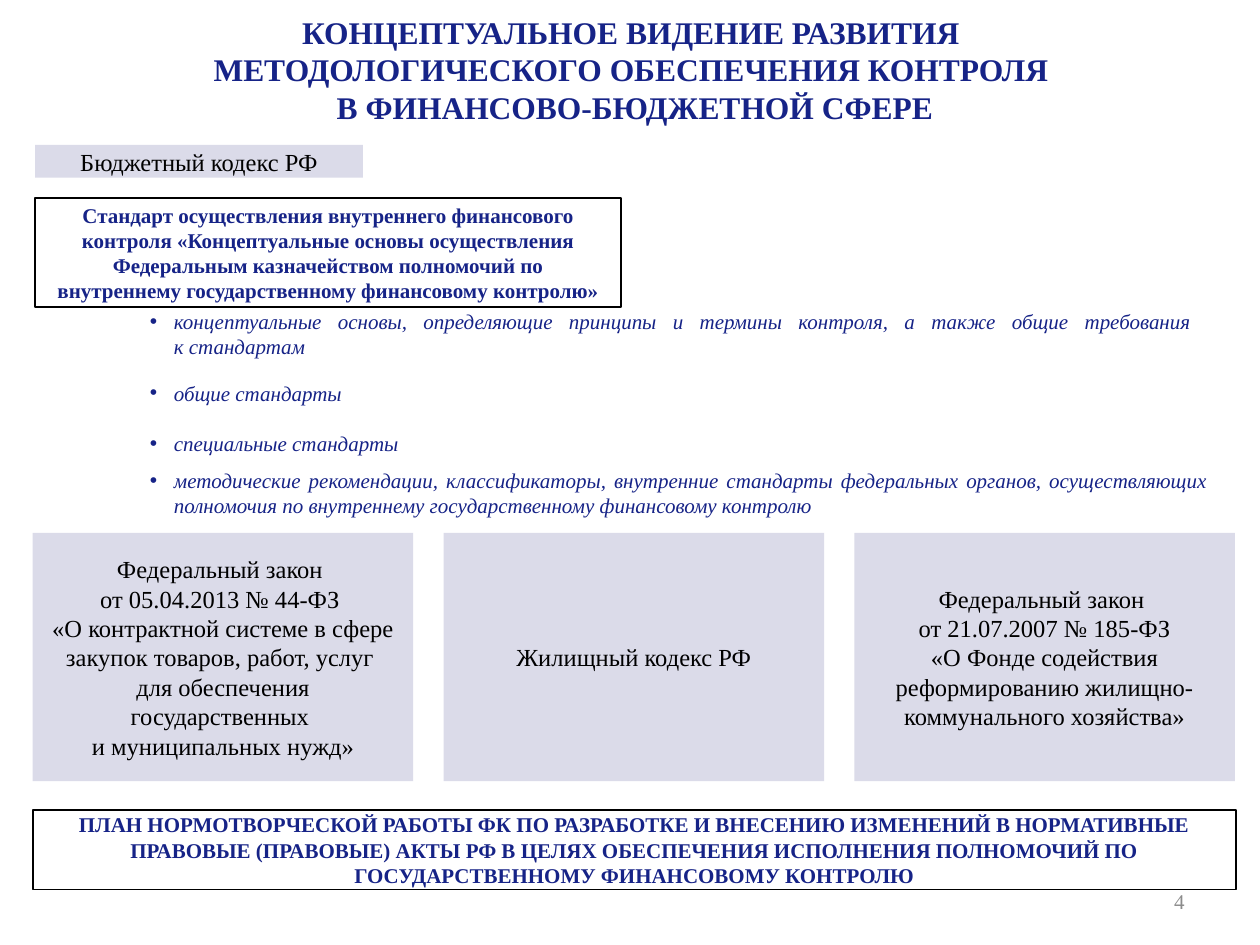
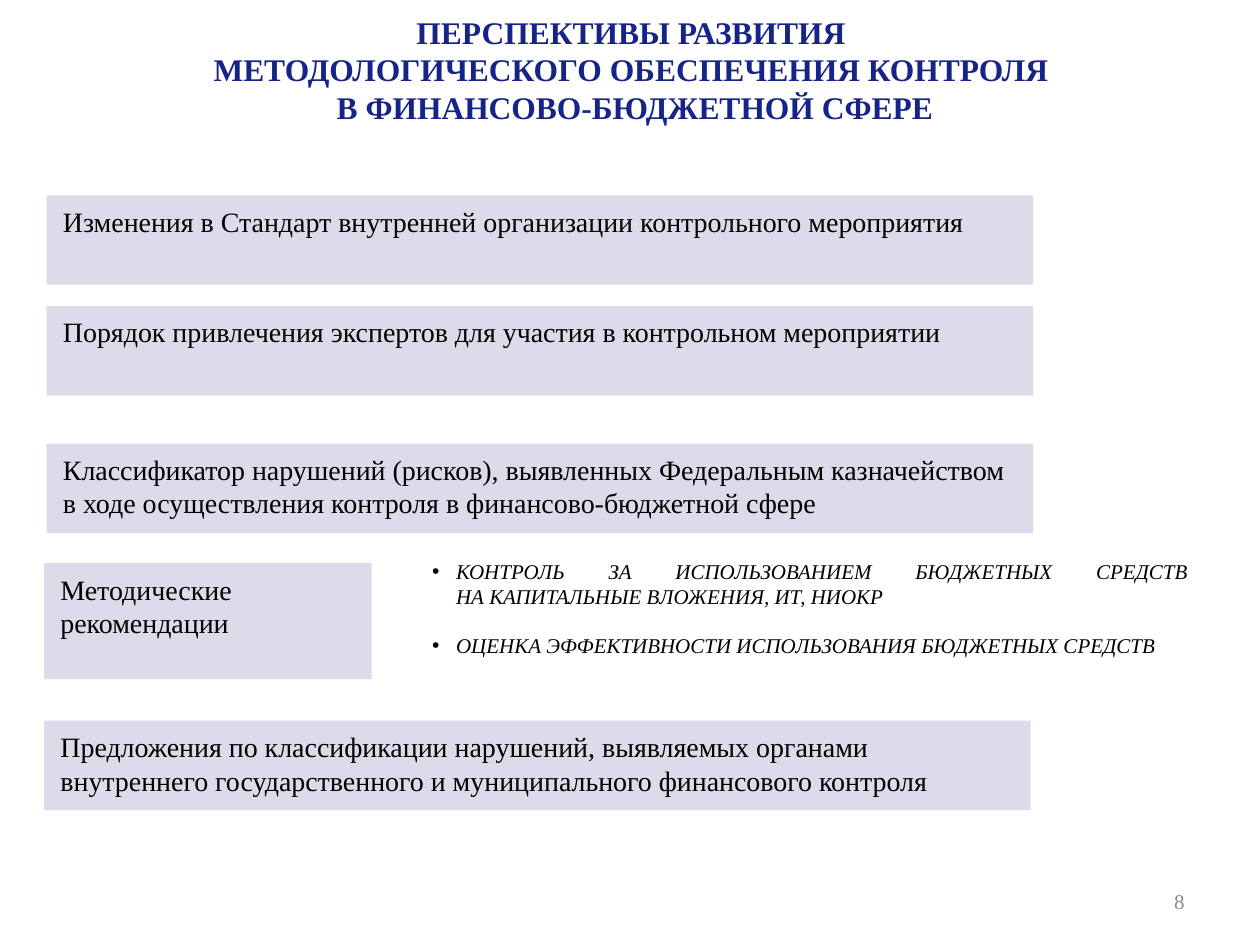
from dataclasses import dataclass

import lxml.etree
import pptx
import pptx.dml.color
import pptx.enum.shapes
import pptx.enum.text
import pptx.oxml.ns
import pptx.util

ALIGN = pptx.enum.text.PP_ALIGN
ANCHOR = pptx.enum.text.MSO_ANCHOR
EMU_PER_PX = 9144  # 100 px to the inch


@dataclass(frozen=True)
class Theme:
    font: str = "Times New Roman"
    navy: str = "162387"
    black: str = "000000"
    white: str = "FFFFFF"
    lilac: str = "DBDBE9"
    gray: str = "8C8C8C"
    title: int = 18
    topic: int = 16
    law: int = 14
    detail: int = 12


THEME = Theme()


@dataclass(frozen=True)
class Area:
    left: int
    top: int
    width: int
    height: int


@dataclass(frozen=True)
class TextStyle:
    size: int
    color: str
    bold: bool = False
    italic: bool = False
    align: ALIGN = ALIGN.CENTER
    anchor: ANCHOR = ANCHOR.MIDDLE
    margin_x: int = 13
    margin_y: int = 7


@dataclass(frozen=True)
class BoxStyle:
    text: TextStyle
    fill: str
    line: str | None = None


@dataclass(frozen=True)
class Box:
    area: Area
    text: str
    style: BoxStyle


@dataclass(frozen=True)
class Bullet:
    text: str
    space_before: float = 0


TITLE_TEXT = TextStyle(THEME.title, THEME.navy, bold=True, anchor=ANCHOR.TOP, margin_x=10, margin_y=5)
NUMBER_TEXT = TextStyle(THEME.detail, THEME.gray, align=ALIGN.RIGHT, margin_x=10, margin_y=5)
NAVY_LIST = TextStyle(THEME.detail, THEME.navy, italic=True, align=ALIGN.JUSTIFY, anchor=ANCHOR.TOP)
BLACK_LIST = TextStyle(THEME.detail, THEME.black, italic=True, align=ALIGN.JUSTIFY, anchor=ANCHOR.TOP)
LAW = BoxStyle(TextStyle(THEME.law, THEME.black), THEME.lilac)
FRAMED = BoxStyle(TextStyle(THEME.detail, THEME.navy, bold=True), THEME.white, THEME.black)
TOPIC = BoxStyle(TextStyle(THEME.topic, THEME.black, align=ALIGN.LEFT, anchor=ANCHOR.TOP), THEME.lilac)

TITLE_AREA = Area(55, 5, 898, 62)
NUMBER_AREA = Area(717, 695, 233, 40)
TITLE_ENDING = "МЕТОДОЛОГИЧЕСКОГО ОБЕСПЕЧЕНИЯ КОНТРОЛЯ \nВ ФИНАНСОВО-БЮДЖЕТНОЙ СФЕРЕ"
BULLET_INDENT = 19

LAW_TEXTS = [
    "Федеральный закон \nот 05.04.2013 № 44-ФЗ \v«О контрактной системе в сфере закупок товаров, "
    "работ, услуг \vдля обеспечения государственных \vи муниципальных нужд»",
    "Жилищный кодекс РФ",
    "Федеральный закон \nот 21.07.2007 № 185-ФЗ\n«О Фонде содействия реформированию "
    "жилищно-коммунального хозяйства»",
]
VISION_BOXES = [
    Box(Area(28, 115, 260, 26), "Бюджетный кодекс РФ", LAW),
    Box(
        Area(28, 157, 465, 87),
        "Стандарт осуществления внутреннего финансового контроля «Концептуальные основы "
        "осуществления Федеральным казначейством полномочий по внутреннему государственному "
        "финансовому контролю»",
        FRAMED,
    ),
    *(Box(Area(26 + 326 * column, 423, 302, 197), law, LAW) for column, law in enumerate(LAW_TEXTS)),
    Box(
        Area(26, 643, 955, 63),
        "ПЛАН НОРМОТВОРЧЕСКОЙ РАБОТЫ ФК ПО РАЗРАБОТКЕ И ВНЕСЕНИЮ ИЗМЕНЕНИЙ В НОРМАТИВНЫЕ "
        "ПРАВОВЫЕ (ПРАВОВЫЕ) АКТЫ РФ В ЦЕЛЯХ ОБЕСПЕЧЕНИЯ ИСПОЛНЕНИЯ ПОЛНОМОЧИЙ ПО "
        "ГОСУДАРСТВЕННОМУ ФИНАНСОВОМУ КОНТРОЛЮ",
        FRAMED,
    ),
]
STANDARDS = [
    Bullet(
        "концептуальные основы, определяющие принципы и термины контроля, а также общие "
        "требования \vк стандартам"
    ),
    Bullet("общие стандарты", 12),
    Bullet("специальные стандарты", 14.5),
    Bullet(
        "методические рекомендации, классификаторы, внутренние стандарты федеральных органов, "
        "осуществляющих полномочия по внутреннему государственному финансовому контролю",
        6.5,
    ),
]
PROSPECT_BOXES = [
    Box(
        Area(37, 155, 783, 71),
        "Изменения в Стандарт внутренней организации контрольного мероприятия",
        TOPIC,
    ),
    Box(
        Area(37, 243, 783, 71),
        "Порядок привлечения экспертов для участия в контрольном мероприятии",
        TOPIC,
    ),
    Box(
        Area(37, 352, 783, 71),
        "Классификатор нарушений (рисков), выявленных Федеральным казначейством в ходе "
        "осуществления контроля в финансово-бюджетной сфере",
        TOPIC,
    ),
    Box(Area(35, 447, 260, 92), "Методические рекомендации", TOPIC),
    Box(
        Area(35, 572, 783, 71),
        "Предложения по классификации нарушений, выявляемых органами внутреннего "
        "государственного и муниципального финансового контроля",
        TOPIC,
    ),
]
RECOMMENDATIONS = [
    Bullet("КОНТРОЛЬ ЗА ИСПОЛЬЗОВАНИЕМ БЮДЖЕТНЫХ СРЕДСТВ \vНА КАПИТАЛЬНЫЕ ВЛОЖЕНИЯ, ИТ, НИОКР"),
    Bullet("ОЦЕНКА ЭФФЕКТИВНОСТИ ИСПОЛЬЗОВАНИЯ БЮДЖЕТНЫХ СРЕДСТВ", 13.5),
]


def px(length: int) -> pptx.util.Emu:
    return pptx.util.Emu(length * EMU_PER_PX)


def rgb(color: str) -> pptx.dml.color.RGBColor:
    return pptx.dml.color.RGBColor.from_string(color)


def edges(area: Area) -> tuple:
    return px(area.left), px(area.top), px(area.width), px(area.height)


def place(placeholder, area: Area) -> None:
    placeholder.left, placeholder.top, placeholder.width, placeholder.height = edges(area)


def add_bullet(paragraph) -> None:
    properties = paragraph._p.get_or_add_pPr()
    properties.set("marL", str(px(BULLET_INDENT)))
    properties.set("indent", str(-px(BULLET_INDENT)))
    for tag, attribute, value in (("a:buFont", "typeface", "Arial"), ("a:buChar", "char", "•")):
        lxml.etree.SubElement(properties, pptx.oxml.ns.qn(tag)).set(attribute, value)


def write(frame, bullets: list[Bullet], style: TextStyle, bulleted: bool = False) -> None:
    frame.word_wrap = True
    frame.auto_size = pptx.enum.text.MSO_AUTO_SIZE.NONE
    frame.vertical_anchor = style.anchor
    frame.margin_left = frame.margin_right = px(style.margin_x)
    frame.margin_top = frame.margin_bottom = px(style.margin_y)
    for index, bullet in enumerate(bullets):
        paragraph = frame.add_paragraph() if index else frame.paragraphs[0]
        paragraph.text = bullet.text
        if bulleted:
            add_bullet(paragraph)
        paragraph.alignment = style.align
        paragraph.space_before = pptx.util.Pt(bullet.space_before)
        font = paragraph.font
        font.name = THEME.font
        font.size = pptx.util.Pt(style.size)
        font.bold = style.bold
        font.italic = style.italic
        font.color.rgb = rgb(style.color)


def write_lines(frame, text: str, style: TextStyle) -> None:
    write(frame, [Bullet(line) for line in text.split("\n")], style)


def draw_box(slide, box: Box) -> None:
    rectangle = slide.shapes.add_shape(pptx.enum.shapes.MSO_SHAPE.RECTANGLE, *edges(box.area))
    rectangle.shadow.inherit = False
    rectangle.fill.solid()
    rectangle.fill.fore_color.rgb = rgb(box.style.fill)
    if box.style.line:
        rectangle.line.color.rgb = rgb(box.style.line)
        rectangle.line.width = pptx.util.Pt(1)
    else:
        rectangle.line.fill.background()
    write_lines(rectangle.text_frame, box.text, box.style.text)


def build_slide(
    deck,
    number: int,
    heading: str,
    boxes: list[Box],
    bullets: list[Bullet],
    list_area: Area,
    list_style: TextStyle,
) -> None:
    slide = deck.slides.add_slide(deck.slide_layouts[1])
    title = slide.shapes.title
    place(title, TITLE_AREA)
    write_lines(title.text_frame, f"{heading} \n{TITLE_ENDING}", TITLE_TEXT)
    body = slide.placeholders[1]
    place(body, list_area)
    write(body.text_frame, bullets, list_style, bulleted=True)
    for box in boxes:
        draw_box(slide, box)
    page_number = slide.shapes.add_textbox(*edges(NUMBER_AREA))
    write_lines(page_number.text_frame, str(number), NUMBER_TEXT)


def main() -> None:
    deck = pptx.Presentation()
    deck.slide_width, deck.slide_height = px(1000), px(750)
    build_slide(
        deck, 4, "КОНЦЕПТУАЛЬНОЕ ВИДЕНИЕ РАЗВИТИЯ",
        VISION_BOXES, STANDARDS, Area(106, 238, 866, 180), NAVY_LIST,
    )
    build_slide(
        deck, 8, "ПЕРСПЕКТИВЫ РАЗВИТИЯ",
        PROSPECT_BOXES, RECOMMENDATIONS, Area(330, 436, 661, 92), BLACK_LIST,
    )
    deck.save("out.pptx")


if __name__ == "__main__":
    main()
